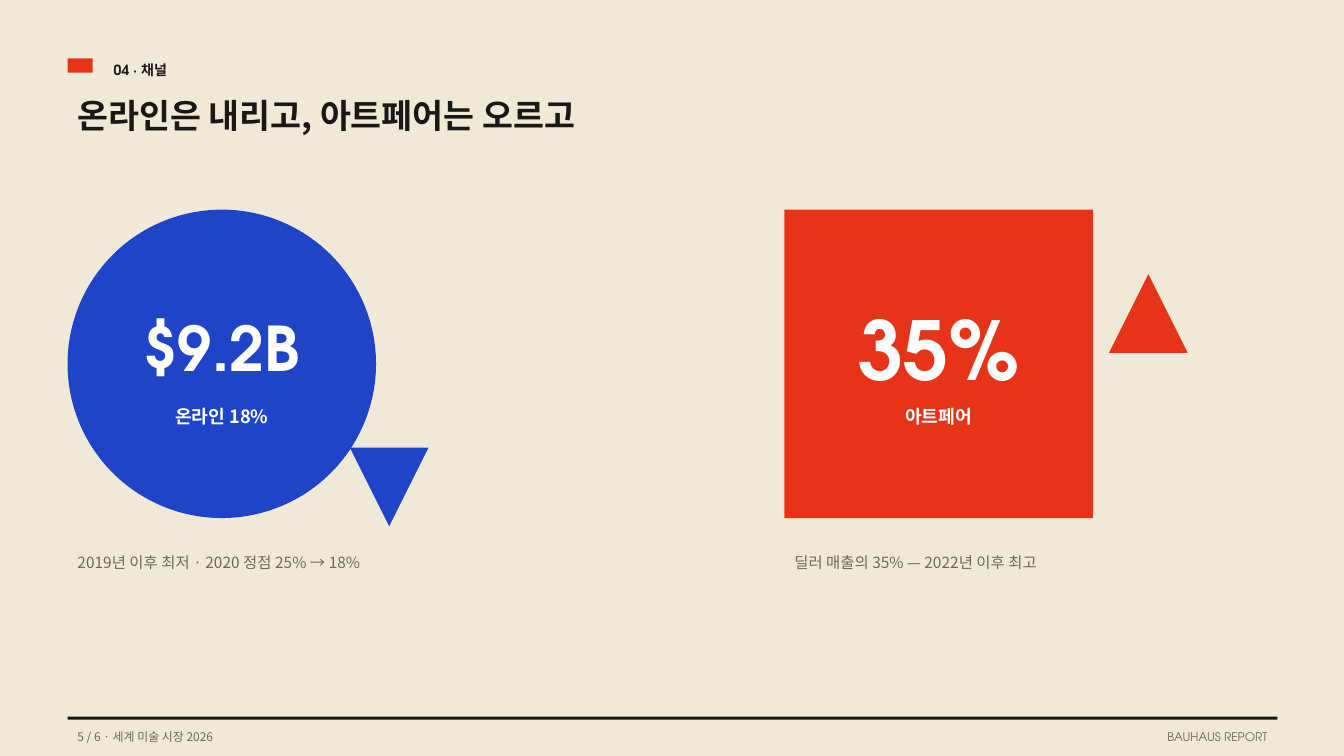
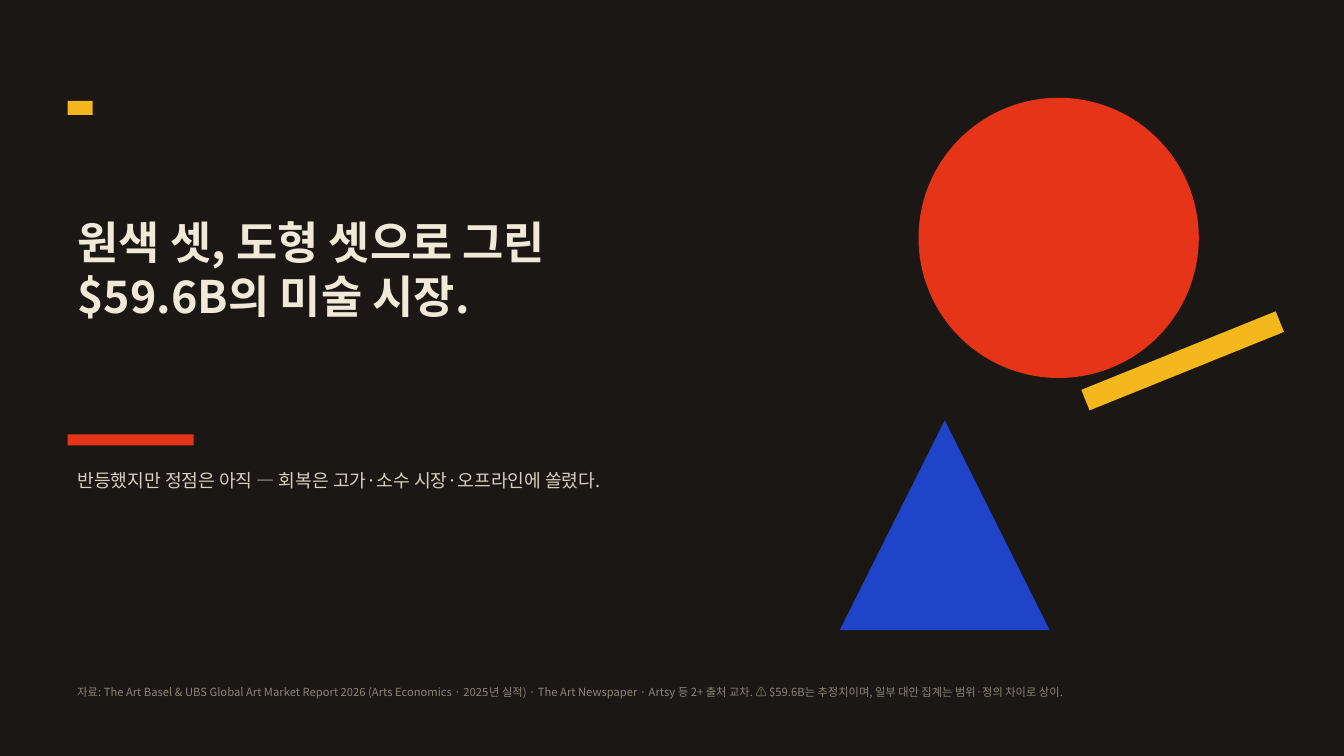
"""Two slides on the art market: channel shares and a closing page."""
from pptx import Presentation
from pptx.dml.color import RGBColor
from pptx.enum.shapes import MSO_SHAPE
from pptx.enum.text import MSO_AUTO_SIZE, PP_ALIGN
from pptx.oxml.ns import qn
from pptx.util import Inches, Pt

RECT, OVAL = MSO_SHAPE.RECTANGLE, MSO_SHAPE.OVAL
TRI = MSO_SHAPE.ISOSCELES_TRIANGLE
LEFT, MID, RIGHT = PP_ALIGN.LEFT, PP_ALIGN.CENTER, PP_ALIGN.RIGHT
GROW = MSO_AUTO_SIZE.SHAPE_TO_FIT_TEXT
SANS, GEO = "Noto Sans CJK KR", "TeX Gyre Adventor"
HUE = dict(cream="F0E9D8", ink="1A1714", red="E63419", blue="1F44C7",
           gold="F4B81C", white="FFFFFF", gray="6E6859", sand="D8D0BE",
           dust="8C8675")
EDGE, WIDE, SIDE, TOP = 0.67, 12, 3.06, 2.08

TAG = "04 · 채널"
TITLE = "온라인은 내리고, 아트페어는 오르고"
FOOT = "5 / 6 · 세계 미술 시장 2026"
BRAND = "BAUHAUS REPORT"
CARDS = [
    dict(x=EDGE, kind=OVAL, hue="blue", num="$9.2B", size=44,
         num_box=(3.03, 1.77, 0.84), name="온라인 18%", name_w=1.18,
         tri=(3.47, 4.44), turn=180, note_w=4.17,
         note="2019년 이후 최저 · 2020 정점 25% → 18%"),
    dict(x=7.78, kind=RECT, hue="red", num="35%", size=58,
         num_box=(2.92, 1.81, 1.08), name="아트페어", name_w=0.93,
         tri=(11, 2.72), turn=0, note_w=4.44,
         note="딜러 매출의 35% — 2022년 이후 최고"),
]
ART = [
    (OVAL, "red", (9.11, 0.97, 2.78, 2.78), 0),
    (TRI, "blue", (8.33, 4.17, 2.08, 2.08), 0),
    (RECT, "gold", (10.69, 3.47, 2.08, 0.22), 338),
    (RECT, "red", (EDGE, 4.31, 1.25, 0.11), 0),
]
CLOSE = [
    ("원색 셋, 도형 셋으로 그린\n$59.6B의 미술 시장.", (2.08, 7.22, 1.18),
     dict(size=32, hue="cream", bold=True)),
    ("반등했지만 정점은 아직 — 회복은 고가·소수 시장·오프라인에 쏠렸다.",
     (4.61, 7.22, 0.32), dict(size=13, hue="sand")),
    ("자료: The Art Basel & UBS Global Art Market Report 2026 "
     "(Arts Economics · 2025년 실적) · The Art Newspaper · Artsy 등 2+ 출처 교차. "
     "⚠ $59.6B는 추정치이며, 일부 대안 집계는 범위·정의 차이로 상이.",
     (6.75, WIDE, 0.24), dict(size=8, hue="dust")),
]


def color(name):
    return RGBColor.from_string(HUE[name])


def page(deck, back, mark, y):
    slide = deck.slides.add_slide(deck.slide_layouts[6])
    fill = slide.background.fill
    fill.solid()
    fill.fore_color.rgb = color(back)
    draw(slide, RECT, mark, (EDGE, y, 0.25, 0.14))
    return slide


def draw(slide, kind, hue, box, turn=0):
    shape = slide.shapes.add_shape(kind, *map(Inches, box))
    shape.shadow.inherit = False
    shape.fill.solid()
    shape.fill.fore_color.rgb = color(hue)
    shape.line.fill.background()
    shape.rotation = turn


def write(slide, text, box, size=11, hue="gray", font=SANS, bold=False,
          align=LEFT, wrap=False):
    frame = slide.shapes.add_textbox(*map(Inches, box)).text_frame
    frame.word_wrap = wrap
    frame.auto_size = GROW
    frame.text = text
    for para in frame.paragraphs:
        para.alignment = align
        for run in para.runs:
            face = run.font
            face.name, face.size, face.bold = font, Pt(size), bold
            face.color.rgb = color(hue)
            east = run._r.get_or_add_rPr().makeelement(
                qn("a:ea"), {"typeface": SANS})
            run._r.rPr.append(east)


def card(slide, x, kind, hue, num, size, num_box, name, name_w, tri, turn,
         note, note_w):
    draw(slide, kind, hue, (x, TOP, SIDE, SIDE))
    mid = x + SIDE / 2
    y, w, h = num_box
    look = dict(hue="white", bold=True, align=MID)
    write(slide, num, (mid - w / 2, y, w, h), size=size, font=GEO, **look)
    write(slide, name, (mid - name_w / 2, 3.97, name_w, 0.32), size=13, **look)
    draw(slide, TRI, hue, (*tri, 0.78, 0.78), turn)
    write(slide, note, (x, 5.44, note_w, 0.29), wrap=True)


def channel(deck):
    slide = page(deck, "cream", "red", 0.58)
    write(slide, TAG, (1.03, 0.56, 0.76, 0.27), size=10, hue="ink", font=GEO,
          bold=True)
    write(slide, TITLE, (EDGE, 0.89, 5.7, 0.5), size=24, hue="ink", bold=True)
    for item in CARDS:
        card(slide, **item)
    draw(slide, RECT, "ink", (EDGE, 7.11, WIDE, 0.03))
    write(slide, FOOT, (EDGE, 7.19, 1.67, 0.24), size=8.5)
    write(slide, BRAND, (EDGE + WIDE - 1.21, 7.19, 1.21, 0.24), size=8.5,
          font=GEO, align=RIGHT)


def closing(deck):
    slide = page(deck, "ink", "gold", 1)
    for kind, hue, box, turn in ART:
        draw(slide, kind, hue, box, turn)
    for text, (y, w, h), look in CLOSE:
        write(slide, text, (EDGE, y, w, h), wrap=True, **look)


def main():
    deck = Presentation()
    deck.slide_width, deck.slide_height = Inches(13.33), Inches(7.5)
    channel(deck)
    closing(deck)
    deck.save("out.pptx")


if __name__ == "__main__":
    main()
